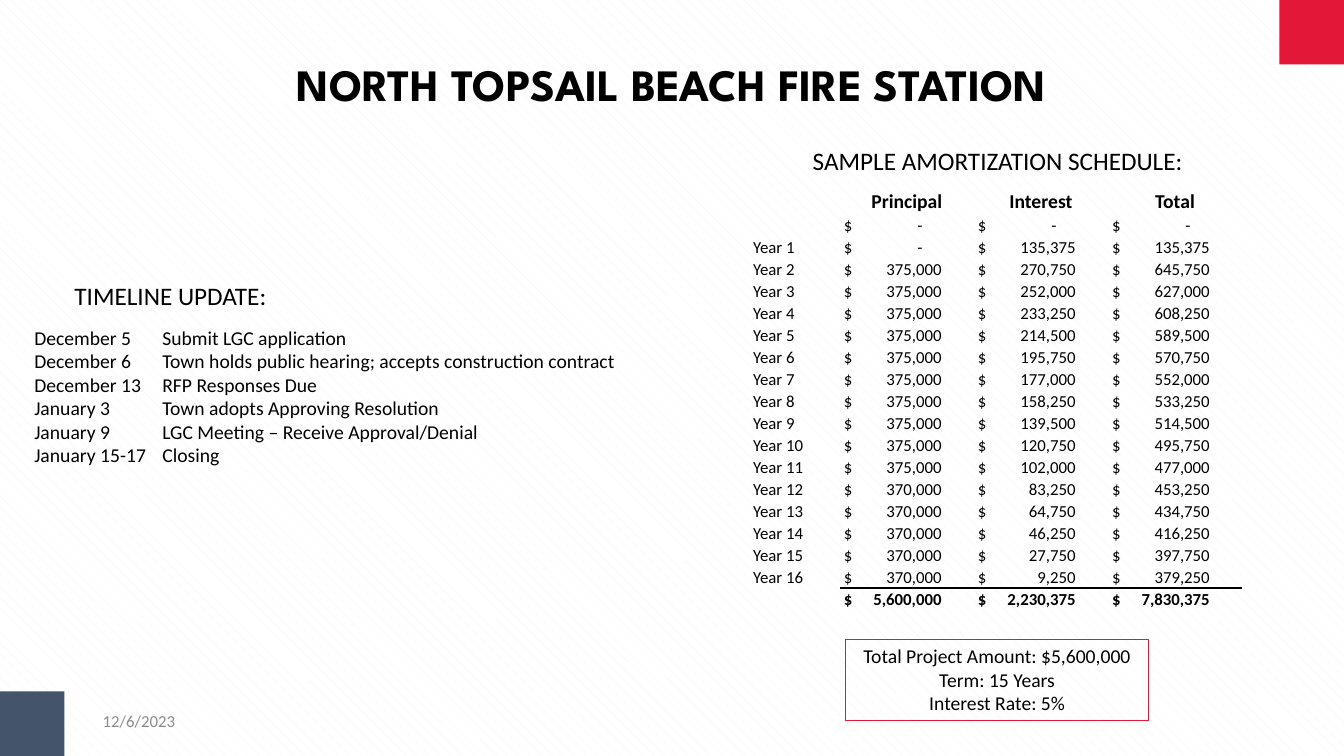
from lxml.etree import SubElement
from pptx import Presentation
from pptx.dml.color import RGBColor
from pptx.enum.dml import MSO_PATTERN
from pptx.enum.shapes import MSO_SHAPE
from pptx.enum.text import MSO_ANCHOR, PP_ALIGN
from pptx.oxml import parse_xml
from pptx.oxml.ns import nsdecls, qn
from pptx.util import Inches, Pt

COLORS = {"red": "E31737", "slate": "44546A", "black": "000000", "gray": "8C8C8C",
          "white": "FFFFFF", "stripe": "F2F2F2"}
TITLE = "NORTH TOPSAIL BEACH FIRE STATION"
TIMELINE = [
    ("December 5", "Submit LGC application"),
    ("December 6", "Town holds public hearing; accepts construction contract"),
    ("December 13", "RFP Responses Due"),
    ("January 3", "Town adopts Approving Resolution"),
    ("January 9", "LGC Meeting – Receive Approval/Denial"),
    ("January 15-17", "Closing"),
]
TERMS = ["Total Project Amount: $5,600,000", "Term: 15 Years", "Interest Rate: 5%"]
HEADERS = ["", "Principal", "Interest", "Total"]
PRINCIPAL = [0] + [375000] * 10 + [370000] * 5
INTEREST = [135375, 270750, 252000, 233250, 214500, 195750, 177000, 158250,
            139500, 120750, 102000, 83250, 64750, 46250, 27750, 9250]
COLUMN_WIDTHS = [0.87, 1.33, 1.33, 1.33]
HEADER_HEIGHT, TABLE_HEIGHT = 0.32, 4.26
NO_STYLE = "{2D5ABB26-0587-4C30-8999-92F81FD0307C}"


def color(name):
    return RGBColor.from_string(COLORS[name])


def add_tab(paragraph, position, side):
    tabs = SubElement(paragraph._p.get_or_add_pPr(), qn("a:tabLst"))
    SubElement(tabs, qn("a:tab"), pos=str(Inches(position)), algn=side)


def style(paragraph, size, bold=False, name="Calibri", tone="black"):
    for span in paragraph.runs:
        span.font.size, span.font.bold, span.font.name = Pt(size), bold, name
        span.font.color.rgb = color(tone)


def write(box, lines, size, align=PP_ALIGN.LEFT, anchor=MSO_ANCHOR.TOP, inset=None,
          tab=None, **look):
    frame = box.text_frame
    frame.word_wrap, frame.vertical_anchor = True, anchor
    if inset is not None:
        frame.margin_left = frame.margin_right = Inches(inset)
        frame.margin_top = frame.margin_bottom = Inches(inset)
    frame.text = "\n".join(lines)
    for paragraph in frame.paragraphs:
        paragraph.alignment = align
        if tab:
            add_tab(paragraph, tab, "l")
        style(paragraph, size, **look)


def add_text(page, place, lines, size, **options):
    box = page.shapes.add_textbox(*map(Inches, place))
    write(box, lines, size, **options)


def add_rectangle(page, place, fill=None, line=None):
    box = page.shapes.add_shape(MSO_SHAPE.RECTANGLE, *map(Inches, place))
    box.shadow.inherit = False
    if fill:
        box.fill.solid()
        box.fill.fore_color.rgb = color(fill)
    else:
        box.fill.background()
    if line:
        box.line.color.rgb = color(line)
        box.line.width = Pt(0.75)
    else:
        box.line.fill.background()
    return box


def add_rule(cell, edge):
    cell._tc.get_or_add_tcPr().insert(0, parse_xml(
        f'<a:{edge} {nsdecls("a")} w="12700"><a:solidFill>'
        f'<a:srgbClr val="{COLORS["black"]}"/></a:solidFill></a:{edge}>'))


def money(amount):
    return f"$\t{amount:,}" if amount else "$\t-"


def schedule_rows():
    amounts = [(0, 0)] + list(zip(PRINCIPAL, INTEREST)) + [(sum(PRINCIPAL), sum(INTEREST))]
    labels = [""] + [f"Year {year + 1}" for year in range(len(PRINCIPAL))] + [""]
    return [HEADERS] + [[label, money(principal), money(interest), money(principal + interest)]
                        for label, (principal, interest) in zip(labels, amounts)]


def fill_cell(cell, text, size, bold):
    cell.fill.background()
    cell.vertical_anchor = MSO_ANCHOR.BOTTOM
    cell.margin_left = Inches(0.04 if "\t" in text else 0.01)
    cell.margin_right = cell.margin_top = Inches(0.01)
    cell.margin_bottom = 0
    paragraph = cell.text_frame.paragraphs[0]
    paragraph.text = text
    if text in HEADERS:
        paragraph.alignment = PP_ALIGN.CENTER
    if "\t" in text:
        add_tab(paragraph, 0.78 if text.endswith("-") else 0.97, "r")
    if not text:
        SubElement(paragraph._p, qn("a:endParaRPr"), sz=str(size * 100))
    style(paragraph, size, bold)


def add_schedule(page):
    rows = schedule_rows()
    last = len(rows) - 1
    table = page.shapes.add_table(len(rows), len(HEADERS), Inches(7.46), Inches(1.8),
                                  Inches(sum(COLUMN_WIDTHS)), Inches(TABLE_HEIGHT)).table
    table.first_row = table.horz_banding = False
    table._tbl.tblPr.find(qn("a:tableStyleId")).text = NO_STYLE
    for column, width in zip(table.columns, COLUMN_WIDTHS):
        column.width = Inches(width)
    for index, values in enumerate(rows):
        height = (TABLE_HEIGHT - HEADER_HEIGHT) / last if index else HEADER_HEIGHT
        table.rows[index].height = Inches(height)
        for place, text in enumerate(values):
            cell = table.cell(index, place)
            fill_cell(cell, text, 12 if index else 14, index in (0, last))
            if place and index >= last - 1:
                add_rule(cell, "lnT" if index == last else "lnB")


def main():
    """Build the fire station financing slide."""
    deck = Presentation()
    deck.slide_width, deck.slide_height = Inches(13.33), Inches(7.5)
    page = deck.slides.add_slide(deck.slide_layouts[6])
    backdrop = page.background.fill
    backdrop.patterned()
    backdrop.pattern = MSO_PATTERN.SHINGLE
    backdrop.fore_color.rgb, backdrop.back_color.rgb = color("stripe"), color("white")

    add_rectangle(page, (12.69, 0, 0.64, 0.64), fill="red")
    add_text(page, (1.6, 0.56, 10.13, 0.54), [TITLE], 32, align=PP_ALIGN.CENTER,
             anchor=MSO_ANCHOR.MIDDLE, inset=0, bold=True, name="League Spartan")
    add_text(page, (0.34, 3.23, 6.06, 1.6), ["\t".join(event) for event in TIMELINE], 14,
             inset=0, tab=1.27)
    add_rectangle(page, (0, 6.86, 0.64, 0.64), fill="slate")
    add_text(page, (0.92, 6.95, 3, 0.4), ["12/6/2023"], 12, anchor=MSO_ANCHOR.MIDDLE,
             tone="gray")
    add_text(page, (0.64, 2.73, 4.3, 0.4), ["TIMELINE UPDATE:"], 18)
    add_schedule(page)
    add_text(page, (7.92, 1.39, 3.95, 0.4), ["SAMPLE AMORTIZATION SCHEDULE:"], 18,
             align=PP_ALIGN.CENTER)
    terms_box = add_rectangle(page, (8.39, 6.34, 3, 0.81), line="red")
    write(terms_box, TERMS, 14, align=PP_ALIGN.CENTER)
    deck.save("out.pptx")


if __name__ == "__main__":
    main()
